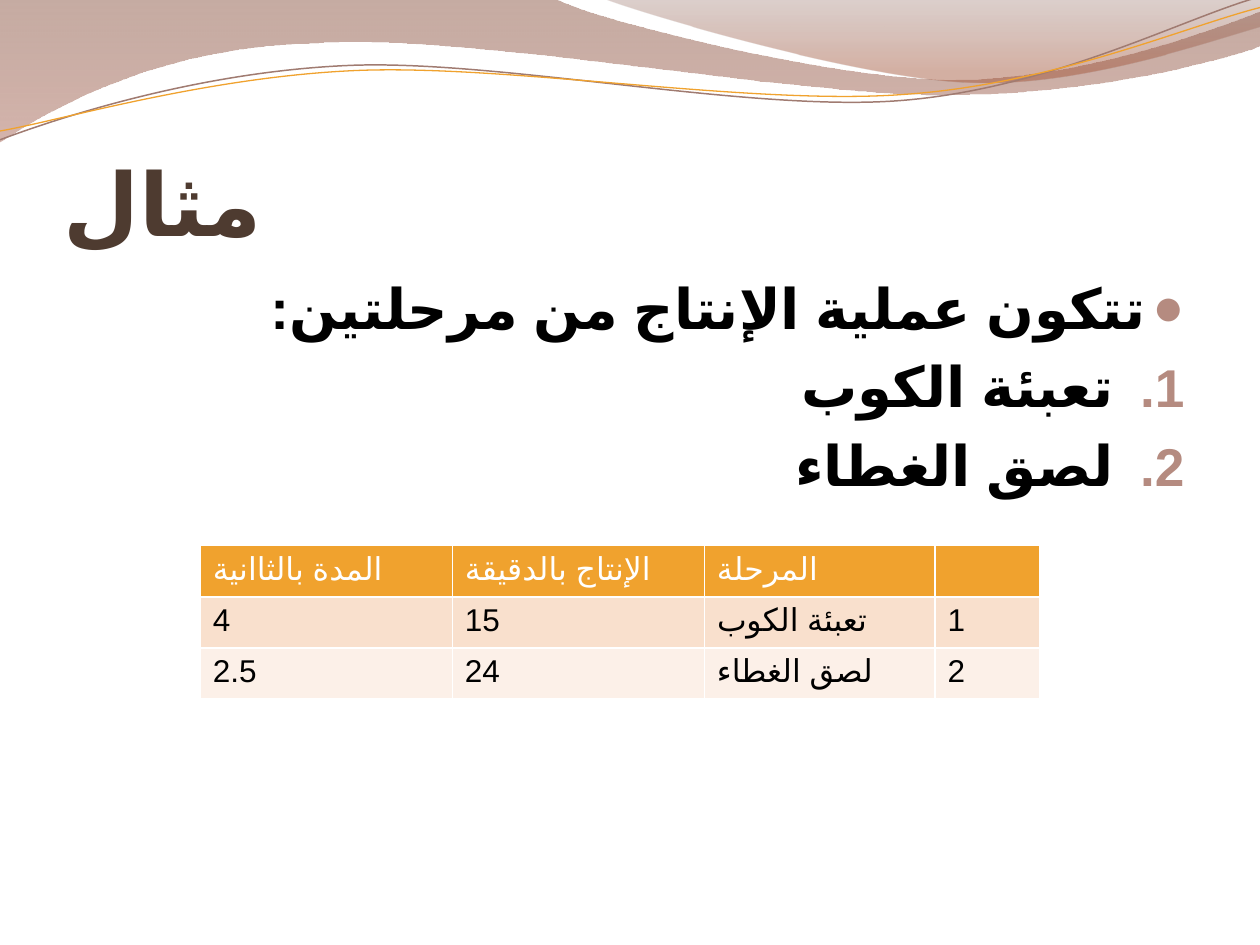
from lxml import etree
from pptx import Presentation
from pptx.dml.color import RGBColor
from pptx.enum import lang, text
from pptx.oxml.ns import qn
from pptx.util import Inches, Pt


def colour(hex_value):
    return RGBColor.from_string(hex_value)


def add_xml(parent, tag, **attributes):
    node = etree.SubElement(parent, qn(tag))
    for name, value in attributes.items():
        node.set(name, str(value))
    return node


def bend(shape, segments):
    """Join the three lines of each six-number segment into one Bezier curve."""
    path = shape.element.spPr.find(".//" + qn("a:path"))
    lines = iter(path.findall(qn("a:lnTo")))
    for segment in segments:
        legs = [next(lines) for _ in range(len(segment) // 2)]
        if len(legs) == 3:
            curve = add_xml(path, "a:cubicBezTo")
            legs[0].addprevious(curve)
            for leg in legs:
                curve.append(leg[0])
                path.remove(leg)


class Deck:
    heading_font, body_font, arabic_font = "Calibri", "Cambria", "Arial"
    brown, rose, orange = "4E3B30", "B58B80", "F0A22E"
    white, black = "FFFFFF", "000000"
    row_fills = ("F9E0CD", "FCF0E8")

    def __init__(self):
        self.presentation = Presentation()
        self.presentation.slide_width = Inches(10)
        self.presentation.slide_height = Inches(7.5)
        layout = self.presentation.slide_layouts[1]
        self.slide = self.presentation.slides.add_slide(layout)

    def outline(self, start, segments, close):
        points = [(Inches(x), Inches(y)) for segment in segments
                  for x, y in zip(segment[::2], segment[1::2])]
        builder = self.slide.shapes.build_freeform(Inches(start[0]), Inches(start[1]))
        builder.add_line_segments(points, close=close)
        shape = builder.convert_to_shape()
        bend(shape, segments)
        shape.shadow.inherit = False
        return shape

    def wave(self, start, segments, stops):
        """Add a filled band; each stop is (position, colour, opacity %)."""
        band = self.outline(start, segments, True)
        band.line.fill.background()
        band.fill.gradient()
        band.fill.gradient_angle = 270
        for stop, (position, shade, _) in zip(band.fill.gradient_stops, stops):
            stop.position = position
            stop.color.rgb = colour(shade)
        shades = band.element.spPr.findall(".//" + qn("a:gs") + "/" + qn("a:srgbClr"))
        for shade, (_, _, opacity) in zip(shades, stops):
            add_xml(shade, "a:alpha", val=opacity * 1000)

    def strand(self, start, segments, shade, width):
        strand = self.outline(start, segments, False)
        strand.fill.background()
        strand.line.color.rgb = colour(shade)
        strand.line.width = Pt(width)

    def style(self, paragraph, font, size, shade, bold):
        paragraph.font.name = font
        paragraph.font.size = Pt(size)
        paragraph.font.bold = bold
        paragraph.font.color.rgb = colour(shade)
        paragraph.font.language_id = lang.MSO_LANGUAGE_ID.ARABIC
        defaults = paragraph._p.pPr.find(qn("a:defRPr"))
        add_xml(defaults, "a:cs", typeface=self.arabic_font)
        for run in paragraph.runs:
            run.font.language_id = lang.MSO_LANGUAGE_ID.ARABIC

    def place(self, placeholder, left, top, width, height):
        """Move a placeholder and bring it in front of the waves."""
        placeholder.left, placeholder.top = Inches(left), Inches(top)
        placeholder.width, placeholder.height = Inches(width), Inches(height)
        placeholder.text_frame.auto_size = text.MSO_AUTO_SIZE.NONE
        self.slide.shapes.element.append(placeholder.element)

    def title(self, wording):
        title = self.slide.shapes.title
        self.place(title, 0.5, 0.77, 9, 1.25)
        frame = title.text_frame
        frame.text = wording
        frame.vertical_anchor = text.MSO_ANCHOR.BOTTOM
        frame.margin_left = frame.margin_right = frame.margin_bottom = 0
        frame.paragraphs[0].alignment = text.PP_ALIGN.LEFT
        self.style(frame.paragraphs[0], self.heading_font, 50, self.brown, True)

    def body(self, intro, steps):
        body = self.slide.placeholders[1]
        self.place(body, 0.5, 2.12, 9, 4.8)
        frame = body.text_frame
        frame.text = "\n".join([intro, *steps])
        for index, paragraph in enumerate(frame.paragraphs):
            paragraph.alignment = text.PP_ALIGN.RIGHT
            indent = Inches(0.56 if index else 0.3)
            properties = paragraph._p.get_or_add_pPr()
            for name, value in (("rtl", 1), ("marL", indent), ("indent", -indent)):
                properties.set(name, str(value))
            add_xml(add_xml(properties, "a:buClr"), "a:srgbClr", val=self.rose)
            add_xml(properties, "a:buSzPct", val=95000)
            if index:
                add_xml(properties, "a:buFont", typeface="+mj-lt")
                add_xml(properties, "a:buAutoNum", type="arabicPeriod")
            else:
                add_xml(properties, "a:buChar", char="●")
            self.style(paragraph, self.body_font, 32, self.black, True)

    def border(self, cell):
        properties = cell._tc.get_or_add_tcPr()
        for side in "LRTB":
            edge = add_xml(properties, "a:ln" + side, w=Pt(1))
            add_xml(add_xml(edge, "a:solidFill"), "a:srgbClr", val=self.white)

    def table(self, rows, widths, left, top, height):
        table = self.slide.shapes.add_table(
            len(rows), len(widths), Inches(left), Inches(top),
            Inches(sum(widths)), Inches(height)).table
        for column, width in zip(table.columns, widths):
            column.width = Inches(width)
        for r, row in enumerate(rows):
            for c, wording in enumerate(row):
                cell = table.cell(r, c)
                self.border(cell)
                cell.fill.solid()
                cell.fill.fore_color.rgb = colour(
                    self.row_fills[(r - 1) % 2] if r else self.orange)
                cell.text = wording
                paragraph = cell.text_frame.paragraphs[0]
                paragraph.alignment = text.PP_ALIGN.LEFT
                paragraph._p.get_or_add_pPr().set("rtl", "1")
                self.style(paragraph, self.body_font, 18,
                           self.black if r else self.white, False)


def main():
    deck = Deck()
    deck.wave((0, 0), [
        (4.4, -0.01), (4.76, 0.17, 6.64, 0.63, 7.58, 0.63),
        (8.53, 0.63, 9.58, 0.26, 10, 0.09), (10.01, 0.36),
        (9.83, 0.44, 8.7, 0.76, 7.46, 0.75), (6.22, 0.75, 3.82, 0.28, 2.57, 0.34),
        (1.29, 0.36, 0.46, 0.83, -0.01, 1.13),
    ], [(0, "814733", 45), (1, "B17667", 55)])
    deck.wave((4.79, -0.01), [
        (5.09, 0.11, 6.82, 0.62, 7.69, 0.65), (8.56, 0.69, 9.61, 0.32, 10, 0.21), (10, 0),
    ], [(0, "8C6359", 30), (0.8, "A15135", 45)])
    deck.strand((0, 1.11), [
        (0.48, 0.93, 1.58, 0.57, 2.77, 0.52), (3.95, 0.47, 5.93, 0.89, 7.13, 0.8),
        (8.33, 0.71, 9.38, 0.15, 9.98, -0.02),
    ], "A07B71", 0.85)
    deck.strand((0, 1.04), [
        (0.47, 0.96, 1.64, 0.61, 2.83, 0.56), (4.03, 0.51, 5.97, 0.84, 7.17, 0.75),
        (8.36, 0.67, 9.41, 0.21, 10, 0.06),
    ], deck.orange, 0.75)

    filling, sealing = "تعبئة الكوب", "لصق الغطاء"
    deck.title("مثال")
    deck.body("تتكون عملية الإنتاج من مرحلتين:", [filling, sealing])
    deck.table([
        ("المدة بالثاانية", "الإنتاج بالدقيقة", "المرحلة", ""),
        ("4", "15", filling, "1"),
        ("2.5", "24", sealing, "2"),
    ], widths=(2, 2, 1.83, 0.83), left=1.59, top=4.33, height=1.22)
    deck.presentation.save("out.pptx")


if __name__ == "__main__":
    main()
